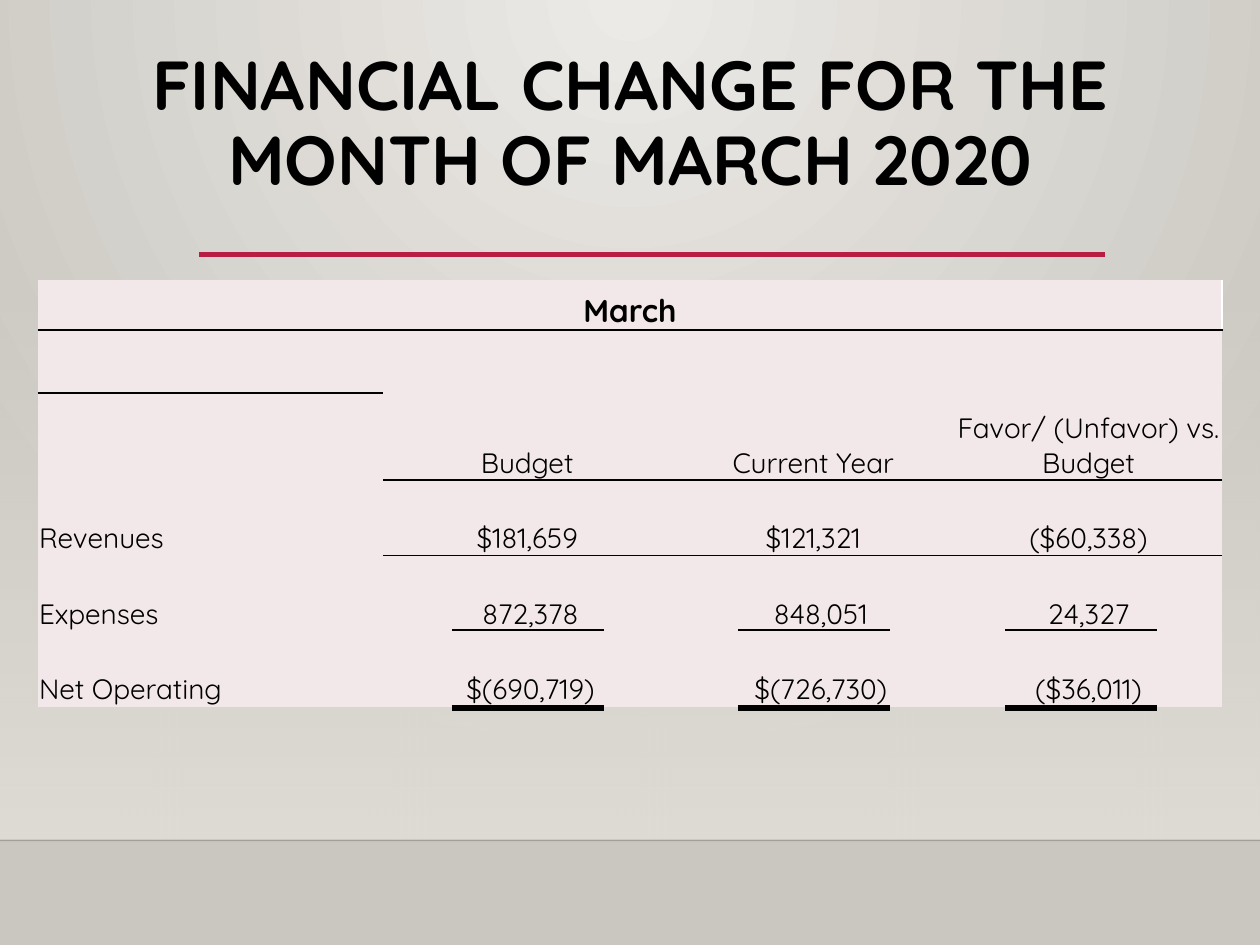
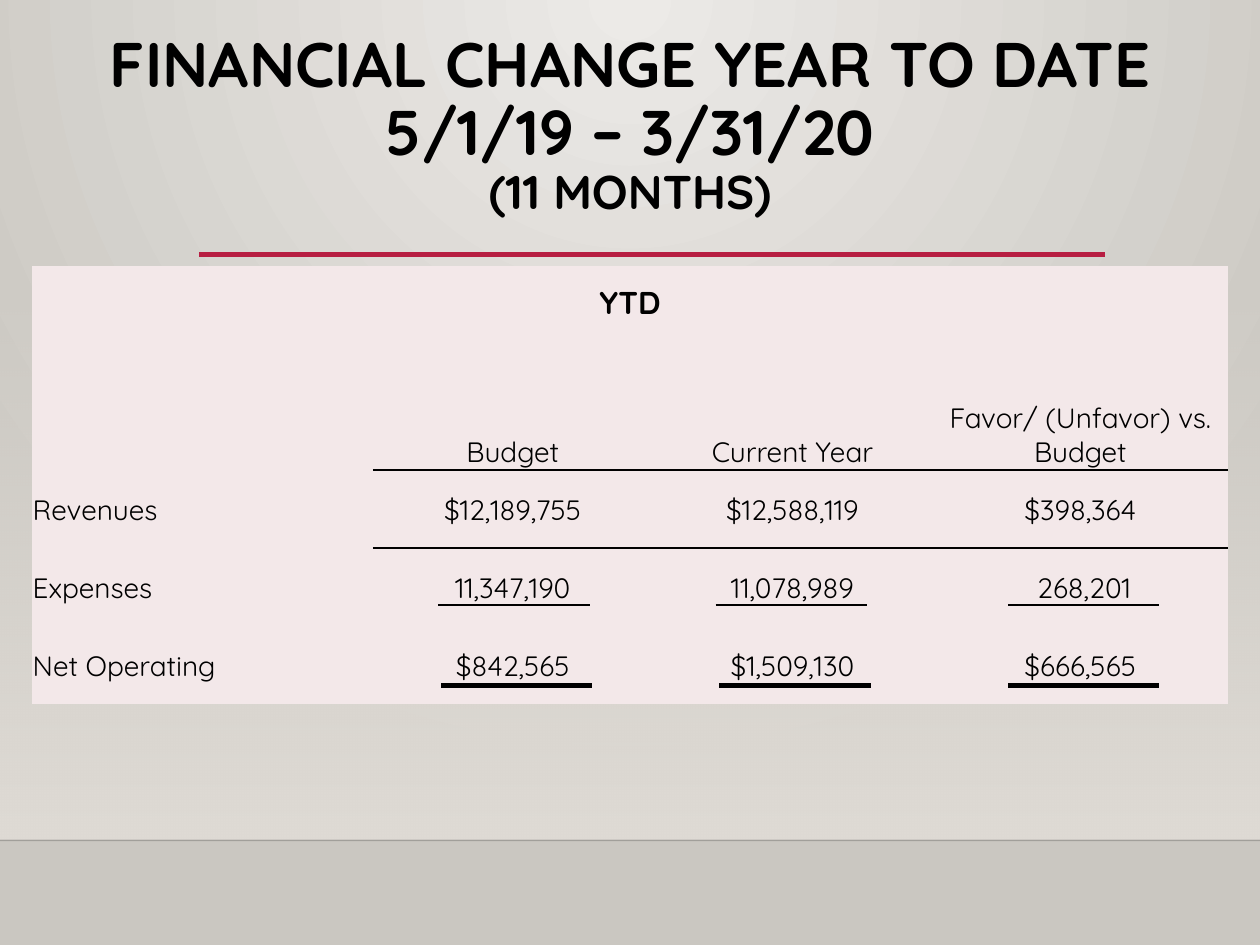
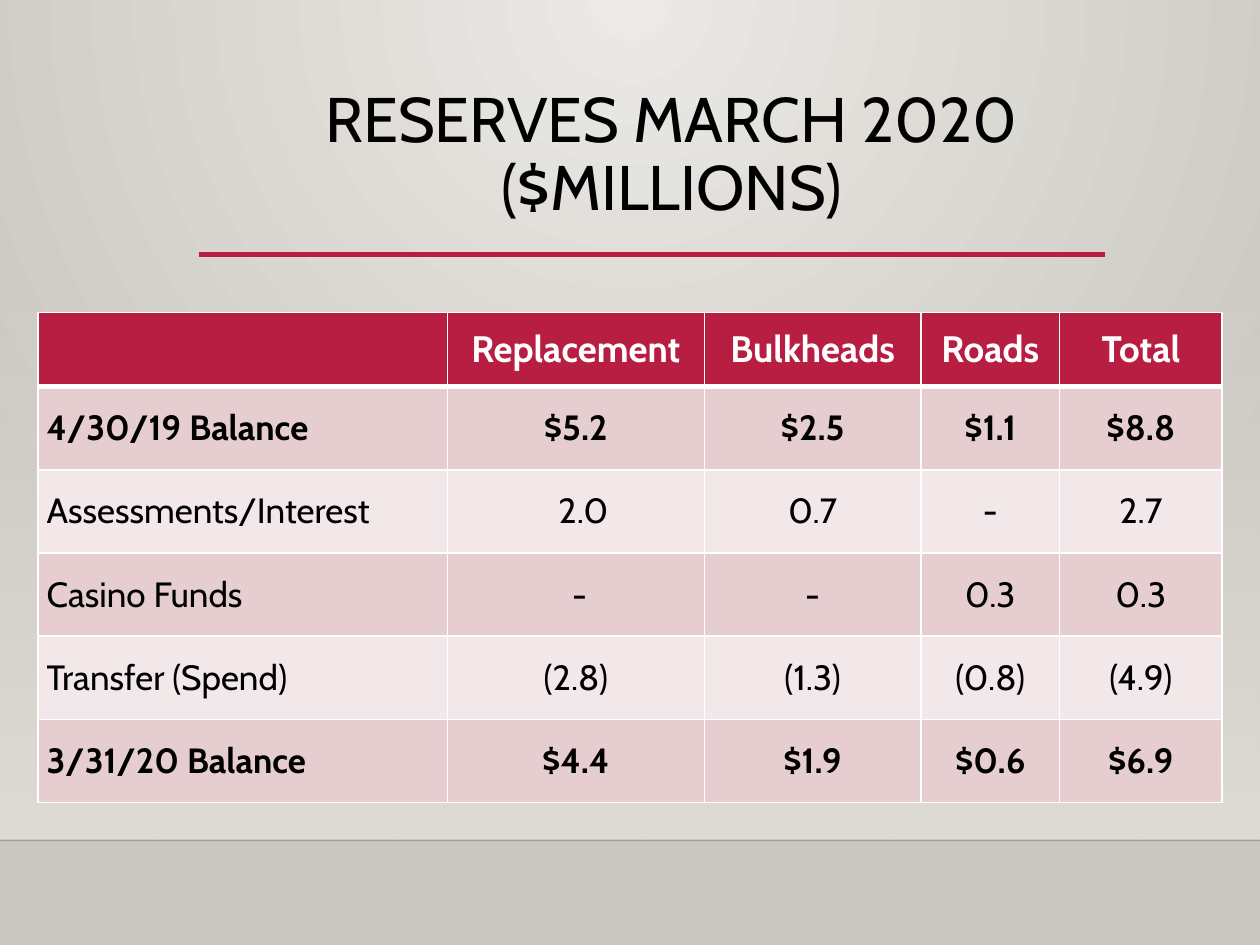
from lxml import etree
from pptx import Presentation
from pptx.dml.color import RGBColor
from pptx.enum.shapes import MSO_CONNECTOR, MSO_SHAPE
from pptx.enum.text import MSO_ANCHOR, MSO_AUTO_SIZE, PP_ALIGN
from pptx.oxml.ns import qn
from pptx.util import Inches, Pt

STRAIGHT, RECT = MSO_CONNECTOR.STRAIGHT, MSO_SHAPE.RECTANGLE
TOP, MIDDLE, BOTTOM = MSO_ANCHOR.TOP, MSO_ANCHOR.MIDDLE, MSO_ANCHOR.BOTTOM
LEFT, CENTER = PP_ALIGN.LEFT, PP_ALIGN.CENTER
NO_AUTOFIT = MSO_AUTO_SIZE.NONE

BLACK, WHITE, CRIMSON = "000000", "FFFFFF", "B71E42"
PALE, ROSE = "F3E8E9", "E6CDCF"
GLOW, GREY, FLOOR = "ECEAE7", "CAC7C1", "DFDBD5"
STATEMENT_FONT, RESERVES_FONT = "Quicksand", "Cabin"
PLAIN_TABLE = "{2D5ABB26-0587-4C30-8999-92F81FD0307C}"
HEADINGS = ["Budget", "Current Year", "Favor/ (Unfavor) vs. Budget"]
TIGHT, ROOMY = (0.01, 0.01, 0.01, 0), (0.07, 0.05, 0.07, 0.05)


def rgb(value):
    """Turn a hex string into a colour."""
    return RGBColor.from_string(value)


def add_text(p, text, font, size, color=BLACK, bold=False):
    """Add one formatted run to a paragraph."""
    r = p.add_run()
    r.text = text
    r.font.name, r.font.size, r.font.bold = font, Pt(size), bold
    r.font.color.rgb = rgb(color)


def set_gradient(fill, start, end, angle=0):
    """Give a fill a two-stop gradient."""
    fill.gradient()
    fill.gradient_angle = angle
    for stop, color in zip(fill.gradient_stops, (start, end)):
        stop.color.rgb = rgb(color)


def set_alpha(shape, percent):
    """Set the opacity of the first colour in a shape."""
    color = next(shape.element.iter(qn("a:srgbClr")))
    etree.SubElement(color, qn("a:alpha"), val=str(percent * 1000))


def add_rule(s, x, y, width, weight, color=BLACK):
    """Draw a horizontal line without a shadow."""
    line = s.shapes.add_connector(STRAIGHT, Inches(x), Inches(y),
                                  Inches(x + width), Inches(y))
    line.line.color.rgb = rgb(color)
    line.line.width = Pt(weight)
    etree.SubElement(line.element.spPr, qn("a:effectLst"))
    return line


def set_background(master):
    """Give the master a radial glow from the top centre."""
    set_gradient(master.background.fill, GLOW, GREY)
    grad = next(master.element.iter(qn("a:gradFill")))
    grad.remove(grad.find(qn("a:lin")))
    radial = etree.SubElement(grad, qn("a:path"), path="circle")
    etree.SubElement(radial, qn("a:fillToRect"),
                     l="43000", t="0", r="43000", b="100000")


def add_backdrop(s):
    """Draw the wall band, floor line and title rule on the slide's layout."""
    band = s.shapes.add_shape(RECT, 0, Inches(2.2), Inches(10), Inches(4.46))
    band.shadow.inherit = False
    band.line.fill.background()
    set_gradient(band.fill, FLOOR, FLOOR, 270)
    set_alpha(band, 0)
    floor_line = add_rule(s, 0, 6.67, 10, 1)
    set_alpha(floor_line, 20)
    title_rule = add_rule(s, 1.58, 2.02, 7.19, 2.5, CRIMSON)
    for shape in (band, floor_line, title_rule):
        s.slide_layout.shapes.element.append(shape.element)


def add_title(s, box, lines, font, bold=False):
    """Place the title and write its lines, each a text and a size."""
    title = s.shapes.title
    title.left, title.top, title.width, title.height = map(Inches, box)
    tf = title.text_frame
    tf.word_wrap, tf.auto_size, tf.vertical_anchor = True, NO_AUTOFIT, TOP
    p = tf.paragraphs[0]
    p.alignment, p.line_spacing = CENTER, 0.9
    for i, (text, size) in enumerate(lines):
        if i:
            p.add_line_break()
        add_text(p, text, font, size, bold=bold)


def add_grid(s, box, columns, rows):
    """Add an unstyled table with the given column widths and row heights."""
    frame = s.shapes.add_table(len(rows), len(columns), *map(Inches, box))
    table = frame.table
    table.first_row = table.horz_banding = False
    next(frame.element.iter(qn("a:tableStyleId"))).text = PLAIN_TABLE
    for column, width in zip(table.columns, columns):
        column.width = Inches(width)
    for row, height in zip(table.rows, rows):
        row.height = Inches(height)
    return table


def style_cell(cell, fill, inset, anchor, borders, nudge=0):
    """Set borders (side: colour, weight), fill, margins and anchor."""
    tc_pr = cell._tc.get_or_add_tcPr()
    for side in "LRTB":
        if side in borders:
            color, weight = borders[side]
            ln = etree.SubElement(tc_pr, qn(f"a:ln{side}"), w=str(Pt(weight)))
            solid = etree.SubElement(ln, qn("a:solidFill"))
            etree.SubElement(solid, qn("a:srgbClr"), val=color)
    cell.fill.solid()
    cell.fill.fore_color.rgb = rgb(fill)
    left, top, right, bottom = inset
    cell.margin_left, cell.margin_top = Inches(left + nudge), Inches(top)
    cell.margin_right, cell.margin_bottom = Inches(right), Inches(bottom)
    cell.vertical_anchor = anchor


def write_cell(cell, text, align=CENTER, **fmt):
    """Write aligned text into a cell, if there is any."""
    if text:
        p = cell.text_frame.paragraphs[0]
        p.alignment = align
        add_text(p, text, **fmt)


def add_statement(s, box, period, columns, rows, values, anchor,
                  nudges, underlines, ruled=False):
    """Add a budget table and the rules under its last two rows."""
    table = add_grid(s, box, columns, rows)
    table.cell(0, 0).merge(table.cell(0, 3))
    for c in range(1, 4):
        table.cell(1, c).merge(table.cell(3, c))
    blank = [""] * 4
    texts = [[period, "", "", ""], [""] + HEADINGS, blank, blank] + values
    for i, line in enumerate(texts):
        for c, text in enumerate(line):
            borders = {}
            if (i == 4 and c) or (i == 1 and ruled):
                borders["T"] = (BLACK, 1)
            if i == 3 and c:
                borders["B"] = (BLACK, 1)
            if i == 0 and ruled:
                borders = {"R": (WHITE, 1), "B": (BLACK, 1)}
            cell = table.cell(i, c)
            style_cell(cell, PALE, TIGHT, anchor if i > 3 else BOTTOM,
                       borders, nudges.get((i, c), 0))
            write_cell(cell, text, LEFT if i > 3 and c == 0 else CENTER,
                       font=STATEMENT_FONT, size=16 if i else 18, bold=i == 0)
    for weight, y, starts in underlines:
        for x in starts:
            add_rule(s, box[0] + x, box[1] + y, 1.2, weight)


def add_reserves(s, box, columns, rows, values, nudges):
    """Add the banded reserves table with bold first and last balances."""
    table = add_grid(s, box, columns, rows)
    for i, line in enumerate(values):
        for c, text in enumerate(line):
            borders = dict.fromkeys("LRTB", (WHITE, 1))
            if i < 2:
                borders["T" if i else "B"] = (WHITE, 3)
            fill = (ROSE if i % 2 else PALE) if i else CRIMSON
            cell = table.cell(i, c)
            style_cell(cell, fill, ROOMY, MIDDLE, borders,
                       nudges.get((i, c), 0))
            write_cell(cell, text, CENTER if c else LEFT, font=RESERVES_FONT,
                       size=20 if i else 21, color=BLACK if i else WHITE,
                       bold=i in (0, 1, len(values) - 1))


def build_march(s):
    """Build the statement for the month."""
    add_title(s, (0.9, 0.35, 8.2, 1.56),
              [("FINANCIAL CHANGE FOR THE", 39.6),
               ("MONTH OF MARCH 2020", 39.6)], STATEMENT_FONT, True)
    add_statement(
        s, (0.3, 2.22, 9.4, 3.38), "March", [2.74, 2.29, 2.25, 2.12],
        [0.4, 0.5, 0.34, 0.35] + [0.6] * 3,
        [["Revenues", "$181,659", "$121,321", "($60,338)"],
         ["Expenses", "872,378", "848,051", "24,327"],
         ["Net Operating", "$(690,719)", "$(726,730)", "($36,011)"]],
        BOTTOM, {(5, 1): 0.05, (5, 2): 0.12, (6, 1): 0.05, (6, 2): 0.12},
        [(1.25, 2.78, (3.29, 5.56, 7.68)), (3, 3.4, (3.29, 5.56, 7.68))],
        ruled=True)


def build_year_to_date(s):
    """Build the statement for the year to date."""
    add_title(s, (0.6, 0.21, 8.8, 1.8),
              [("FINANCIAL CHANGE YEAR TO DATE", 36),
               ("5/1/19 – 3/31/20", 36), ("(11 MONTHS)", 27)],
              STATEMENT_FONT, True)
    add_statement(
        s, (0.25, 2.11, 9.5, 3.48), "YTD", [2.71, 2.22, 2.22, 2.35],
        [0.45] + [0.39] * 3 + [0.62] * 3,
        [["Revenues", "$12,189,755", "$12,588,119", "$398,364"],
         ["Expenses", "11,347,190", "11,078,989", "268,201"],
         ["Net Operating", "$842,565", "$1,509,130", "$666,565"]],
        MIDDLE, {(5, 3): 0.06},
        [(1.25, 2.69, (3.23, 5.43, 7.75)), (3, 3.33, (3.25, 5.46, 7.75))])


def build_reserves(s):
    """Build the reserves slide."""
    add_title(s, (1.43, 0.65, 7.8, 0.64),
              [("RESERVES MARCH 2020 ($MILLIONS)", 36)], RESERVES_FONT)
    add_reserves(
        s, (0.3, 2.48, 9.4, 3.9), [3.25, 2.04, 1.72, 1.1, 1.29],
        [0.59] + [0.66] * 5,
        [["", "Replacement", "Bulkheads", "Roads", "Total"],
         ["4/30/19 Balance", "$5.2", "$2.5", "$1.1", "$8.8"],
         ["Assessments/Interest", "2.0", "0.7", "-", "2.7"],
         ["Casino Funds", "-", "-", "0.3", "0.3"],
         ["Transfer (Spend)", "(2.8)", "(1.3)", "(0.8)", "(4.9)"],
         ["3/31/20 Balance", "$4.4", "$1.9", "$0.6", "$6.9"]],
        {(2, 1): 0.12, (3, 1): 0.06})


def main():
    """Build and save the presentation."""
    prs = Presentation()
    prs.slide_width, prs.slide_height = Inches(10), Inches(7.5)
    set_background(prs.slide_master)
    builders = (build_march, build_year_to_date, build_reserves)
    slides = [prs.slides.add_slide(prs.slide_layouts[5]) for _ in builders]
    add_backdrop(slides[0])
    for build, s in zip(builders, slides):
        build(s)
    prs.save("out.pptx")


if __name__ == "__main__":
    main()
